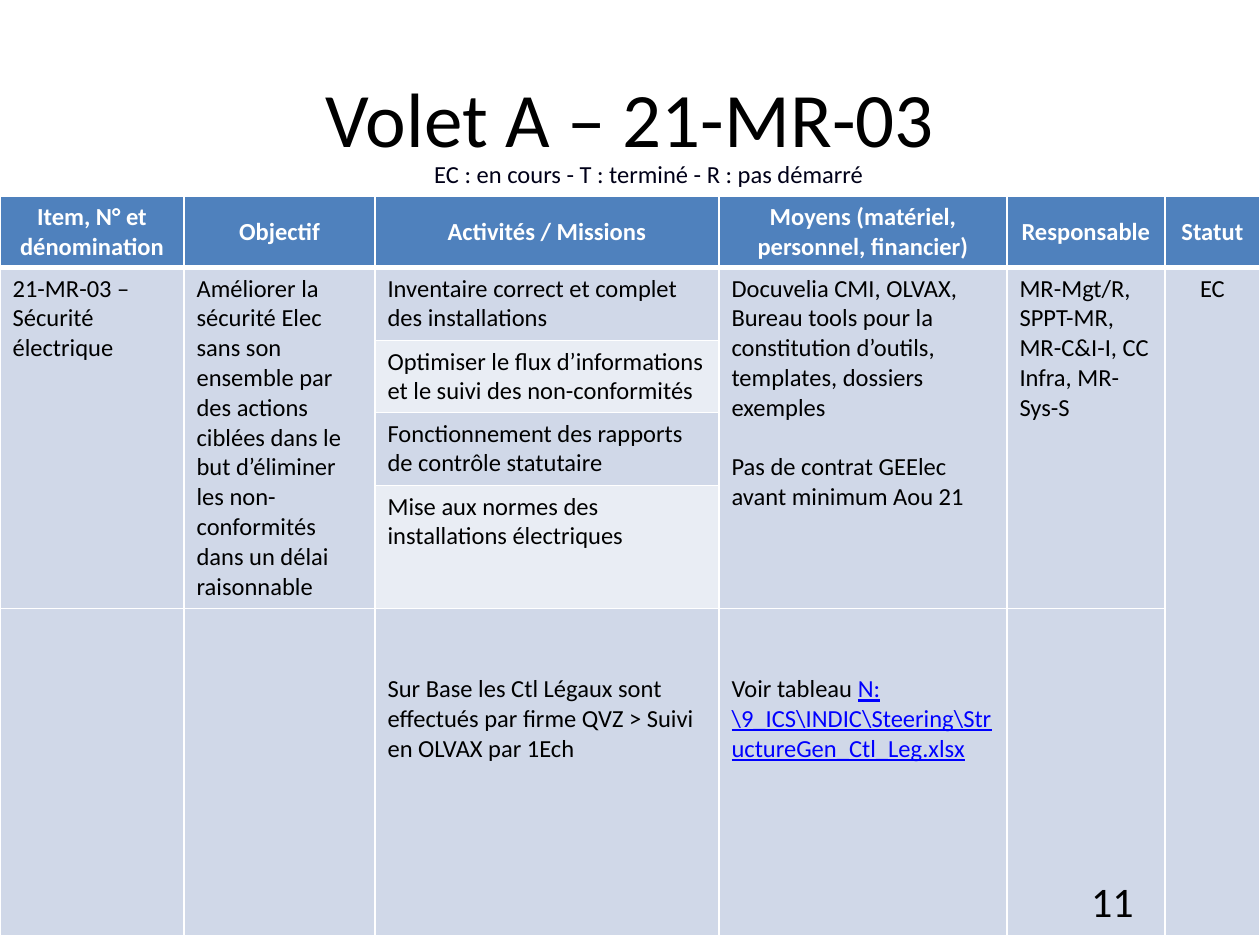
from lxml import etree
from pptx import Presentation
from pptx.dml.color import RGBColor
from pptx.enum.text import MSO_ANCHOR, PP_ALIGN
from pptx.oxml.ns import qn
from pptx.util import Emu, Pt

LEFT, CENTER, RIGHT = PP_ALIGN.LEFT, PP_ALIGN.CENTER, PP_ALIGN.RIGHT
TOP, MIDDLE, BOTTOM = MSO_ANCHOR.TOP, MSO_ANCHOR.MIDDLE, MSO_ANCHOR.BOTTOM

FONT = "Calibri"
BLACK, WHITE, BLUE, LINK = "000000", "FFFFFF", "4F81BD", "0000FF"
BAND, LIGHT = "D0D8E8", "E9EDF4"
TABLE_TOP = 196
COLS = [184, 191, 344, 288, 158, 95]
ROWS = [71, 73, 72, 73, 123, 327]
LINE_PT = 17
NOTE_MARGIN = 66

TITLE = "Volet A – 21-MR-03"
LEGEND = "EC : en cours - T : terminé - R : pas démarré"
PAGE = "11"

HEADERS = ["Item, N° et dénomination", "Objectif", "Activités / Missions",
           "Moyens (matériel, personnel, financier)", "Responsable", "Statut"]
ACTIVITIES = ["Inventaire correct et complet des installations",
              "Optimiser le flux d’informations et le suivi des non-conformités",
              "Fonctionnement des rapports de contrôle statutaire",
              "Mise aux normes des installations électriques"]
MERGED = {
    0: (4, ["21-MR-03 – Sécurité électrique"]),
    1: (4, ["Améliorer la sécurité Elec sans son ensemble par des actions ciblées "
            "dans le but d’éliminer les non-conformités dans un délai raisonnable"]),
    3: (4, ["Docuvelia CMI, OLVAX, Bureau tools pour la constitution d’outils, "
            "templates, dossiers exemples",
            "Pas de contrat GEElec avant minimum Aou 21"]),
    4: (4, ["MR-Mgt/R, SPPT-MR, MR-C&I-I, CC Infra, MR-Sys-S"]),
    5: (5, ["EC"]),
}
NOTES = {
    2: [("Sur Base les Ctl Légaux sont effectués par firme QVZ > Suivi en OLVAX par 1Ech", BLACK)],
    3: [("Voir tableau ", BLACK),
        ("N:\\9_ICS\\INDIC\\Steering\\StructureGen_Ctl_Leg.xlsx", LINK)],
}


def px(n):
    return Emu(round(n * 914400 / 126))


def rgb(value):
    return RGBColor.from_string(value)


def add_run(p, text, size=14, color=BLACK, bold=False):
    r = p.add_run()
    r.text = text
    r.font.name = FONT
    r.font.size = Pt(size)
    r.font.bold = bold
    r.font.color.rgb = rgb(color)
    return r


def add_text(slide, box, text, size, color, align, anchor):
    tf = slide.shapes.add_textbox(*map(px, box)).text_frame
    tf.word_wrap = True
    tf.vertical_anchor = anchor
    p = tf.paragraphs[0]
    p.alignment = align
    add_run(p, text, size, color)


def style_cell(cell, fill, bottom):
    cell.fill.solid()
    cell.fill.fore_color.rgb = rgb(fill)
    tc_pr = cell._tc.get_or_add_tcPr()
    for i, (side, width) in enumerate([("L", 1), ("R", 1), ("T", 1), ("B", bottom)]):
        ln = etree.Element(qn("a:ln" + side), w=str(Pt(width)))
        solid = etree.SubElement(ln, qn("a:solidFill"))
        etree.SubElement(solid, qn("a:srgbClr"), val=WHITE)
        tc_pr.insert(i, ln)


def fill_cell(cell, paragraphs, align=LEFT, anchor=TOP, color=BLACK, bold=False):
    cell.vertical_anchor = anchor
    tf = cell.text_frame
    for i, text in enumerate(paragraphs):
        p = tf.add_paragraph() if i else tf.paragraphs[0]
        p.alignment = align
        if i:
            p.space_before = Pt(LINE_PT)
        add_run(p, text, color=color, bold=bold)


def add_plan(slide):
    frame = slide.shapes.add_table(len(ROWS), len(COLS), 0, px(TABLE_TOP),
                                   px(sum(COLS)), px(sum(ROWS)))
    table = frame.table
    for column, width in zip(table.columns, COLS):
        column.width = px(width)
    for row, height in zip(table.rows, ROWS):
        row.height = px(height)

    for r in range(len(ROWS)):
        for c in range(len(COLS)):
            light = c == 2 and r in (2, 4)
            fill = BLUE if r == 0 else LIGHT if light else BAND
            style_cell(table.cell(r, c), fill, 1 if r else 3)

    for c, text in enumerate(HEADERS):
        fill_cell(table.cell(0, c), [text], CENTER, MIDDLE, WHITE, True)
    for r, text in enumerate(ACTIVITIES, 1):
        fill_cell(table.cell(r, 2), [text])
    for c, (span, paragraphs) in MERGED.items():
        cell = table.cell(1, c)
        cell.merge(table.cell(span, c))
        fill_cell(cell, paragraphs, CENTER if c == 5 else LEFT)
    for c, runs in NOTES.items():
        cell = table.cell(len(ROWS) - 1, c)
        cell.margin_top = px(NOTE_MARGIN)
        for text, color in runs:
            r = add_run(cell.text_frame.paragraphs[0], text, color=color)
            r.font.underline = color == LINK


def main():
    prs = Presentation()
    prs.slide_width, prs.slide_height = px(1260), px(945)
    slide = prs.slides.add_slide(prs.slide_layouts[6])
    add_text(slide, (63, 38, 1134, 158), TITLE, 44, BLACK, CENTER, MIDDLE)
    add_plan(slide)
    add_text(slide, (903, 876, 243, 50), PAGE, 24, BLACK, RIGHT, MIDDLE)
    add_text(slide, (302, 147, 694, 48), LEGEND, 14, "000018", CENTER, BOTTOM)
    prs.save("out.pptx")


if __name__ == "__main__":
    main()
